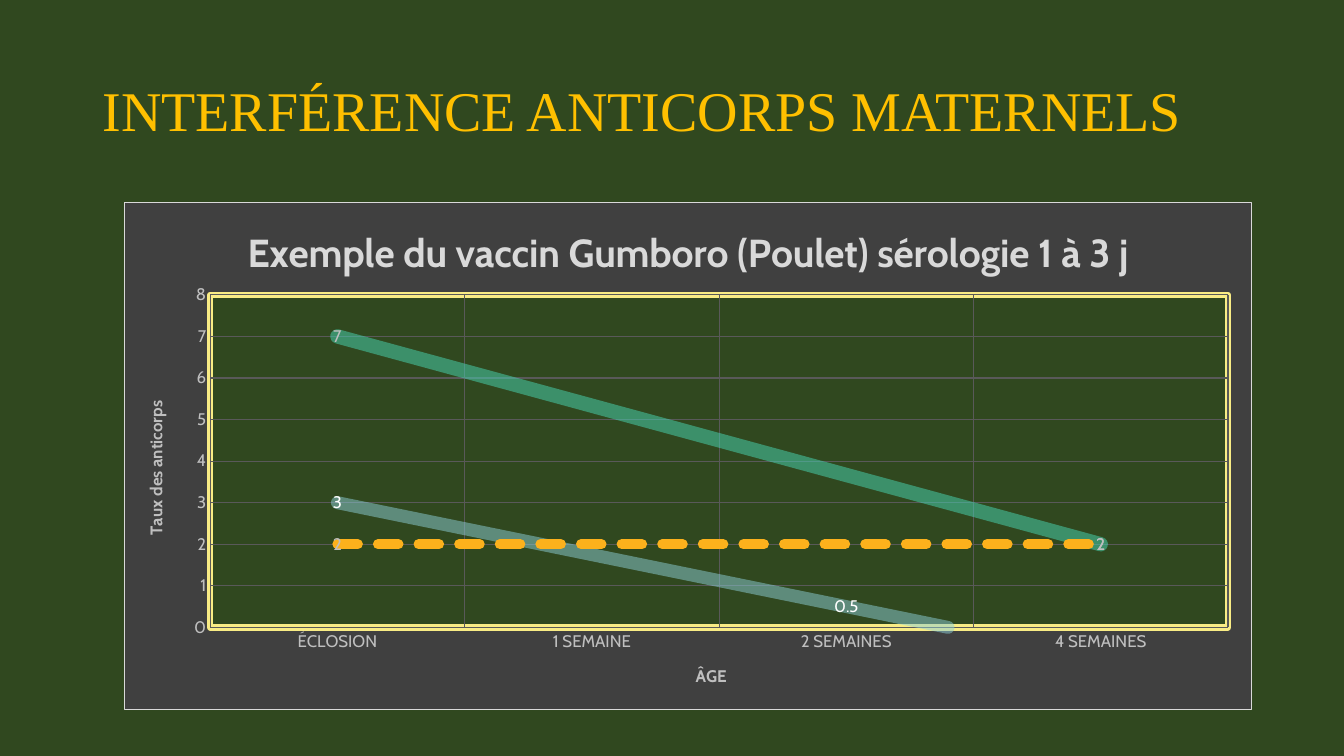
"""Build the slide on maternal antibody interference."""
import pptx
import pptx.chart.data
import pptx.dml.color
import pptx.enum.chart
import pptx.enum.text
import pptx.oxml
import pptx.oxml.ns
import pptx.util
from pptx.util import Inches

THEME = {
    "background": "30481F", "title": "FFC000", "panel": "404040", "border": "D9D9D9",
    "frame": "F9EC85", "grid": "595959", "axis": "BFBFBF", "heading": "D9D9D9", "label": "FFFFFF",
    "title_font": "Times New Roman", "chart_font": "Cabin",
    "title_size": 40, "heading_size": 28, "axis_size": 12, "chart_size": 10,
}
NAMESPACES = pptx.oxml.ns.nsdecls("c", "a")


def set_font(font, size, color, name=THEME["chart_font"], bold=False):
    values = {"size": pptx.util.Pt(size), "name": name, "bold": bold}
    for attribute, value in values.items():
        setattr(font, attribute, value)
    font.color.rgb = pptx.dml.color.RGBColor.from_string(color)


def shape_xml(fill, line, width, dash="solid", opacity=100):
    fill_xml = f'<a:solidFill><a:srgbClr val="{fill}"/></a:solidFill>' if fill else ""
    return (f'<c:spPr {NAMESPACES}>{fill_xml}<a:ln w="{pptx.util.Pt(width)}" cap="rnd"><a:solidFill>'
            f'<a:srgbClr val="{line}"><a:alpha val="{opacity * 1000}"/></a:srgbClr></a:solidFill>'
            f'<a:prstDash val="{dash}"/><a:round/></a:ln></c:spPr>')


presentation = pptx.Presentation()
presentation.slide_width, presentation.slide_height = Inches(13.33), Inches(7.5)
slide = presentation.slides.add_slide(presentation.slide_layouts[6])
slide.background.fill.solid()
slide.background.fill.fore_color.rgb = pptx.dml.color.RGBColor.from_string(THEME["background"])

title_box = slide.shapes.add_textbox(Inches(0.92), Inches(0.4), Inches(11.5), Inches(1.45))
title_box.text_frame.word_wrap = True
title_box.text_frame.vertical_anchor = pptx.enum.text.MSO_ANCHOR.MIDDLE
paragraph = title_box.text_frame.paragraphs[0]
paragraph.text = "INTERFÉRENCE ANTICORPS MATERNELS"
paragraph.line_spacing = 0.9
set_font(paragraph.runs[0].font, THEME["title_size"], THEME["title"], THEME["title_font"])

SERIES = [
    {"values": (7, None, None, 2), "line": ("FCB11C", 8.25), "label": THEME["axis"],
     "trend": ("48D8B5", 10.25, "solid", 50), "forward": 0},
    {"values": (3, None, 0.5, None), "line": ("F4DE3A", 1.75), "label": THEME["label"],
     "trend": ("8DCFD8", 9.25, "solid", 50), "forward": 0.5},
    {"values": (2, None, None, 2), "line": ("608F3D", 1.75), "label": THEME["axis"],
     "trend": ("FCB11C", 7.25, "sysDash", 100), "forward": 0},
]
chart_data = pptx.chart.data.CategoryChartData()
chart_data.categories = ["ÉCLOSION", "1 SEMAINE", "2 SEMAINES", "4 SEMAINES"]
for number, entry in enumerate(SERIES, 1):
    chart_data.add_series(f"Series {number}", entry["values"])
chart = slide.shapes.add_chart(
    pptx.enum.chart.XL_CHART_TYPE.LINE, Inches(1.23), Inches(2), Inches(11.19), Inches(5.04), chart_data
).chart
chart.has_legend = False
set_font(chart.font, THEME["chart_size"], THEME["label"])
chart.plots[0].vary_by_categories = False

headings = [
    (chart, "Exemple du vaccin Gumboro (Poulet) sérologie 1 à 3 j", THEME["heading_size"], THEME["heading"]),
    (chart.category_axis, "ÂGE", THEME["axis_size"], THEME["axis"]),
    (chart.value_axis, "Taux des anticorps", THEME["axis_size"], THEME["axis"]),
]
for owner, text, size, color in headings:
    owner.has_title = True
    title = owner.chart_title if owner is chart else owner.axis_title
    title.text_frame.text = text
    set_font(title.text_frame.paragraphs[0].runs[0].font, size, color, bold=True)
chart.chart_title.include_in_layout = False

for axis in (chart.category_axis, chart.value_axis):
    axis.major_tick_mark = axis.minor_tick_mark = pptx.enum.chart.XL_TICK_MARK.NONE
    axis.has_major_gridlines = True
    axis.major_gridlines.format.line.width = pptx.util.Pt(0.75)
    axis.major_gridlines.format.line.color.rgb = pptx.dml.color.RGBColor.from_string(THEME["grid"])
    axis.format.line.fill.background()
    set_font(axis.tick_labels.font, THEME["axis_size"], THEME["axis"])
for attribute, value in {"minimum_scale": 0, "maximum_scale": 8, "major_unit": 1}.items():
    setattr(chart.value_axis, attribute, value)

for series, entry in zip(chart.plots[0].series, SERIES):
    color, width = entry["line"]
    series.smooth = False
    series.marker.style = pptx.enum.chart.XL_MARKER_STYLE.NONE
    series.format.line.color.rgb = pptx.dml.color.RGBColor.from_string(color)
    series.format.line.width = pptx.util.Pt(width)
    labels = series.data_labels
    labels.show_value = True
    labels.position = pptx.enum.chart.XL_LABEL_POSITION.CENTER
    set_font(labels.font, THEME["axis_size"], entry["label"])
    forward = f'<c:forward val="{entry["forward"]}"/>' if entry["forward"] else ""
    trendline = pptx.oxml.parse_xml(
        f'<c:trendline {NAMESPACES}>{shape_xml(None, *entry["trend"])}<c:trendlineType val="linear"/>'
        f'{forward}<c:dispRSqr val="0"/><c:dispEq val="0"/></c:trendline>')
    series._element.find(pptx.oxml.ns.qn("c:cat")).addprevious(trendline)

chart_space = chart._chartSpace
plot_area = chart_space.chart.plotArea
plot_area.append(pptx.oxml.parse_xml(shape_xml(THEME["background"], THEME["frame"], 4.5)))
chart_space.find(pptx.oxml.ns.qn("c:txPr")).addprevious(
    pptx.oxml.parse_xml(shape_xml(THEME["panel"], THEME["border"], 0.75)))
for old_layout in plot_area.findall(pptx.oxml.ns.qn("c:layout")):
    plot_area.remove(old_layout)
bounds = "".join(f'<c:{key} val="{value}"/>' for key, value in
                 {"x": 0.076, "y": 0.183, "w": 0.903, "h": 0.656}.items())
plot_area.insert(0, pptx.oxml.parse_xml(
    f'<c:layout {NAMESPACES}><c:manualLayout><c:layoutTarget val="inner"/><c:xMode val="edge"/>'
    f'<c:yMode val="edge"/>{bounds}</c:manualLayout></c:layout>'))

presentation.save("out.pptx")
